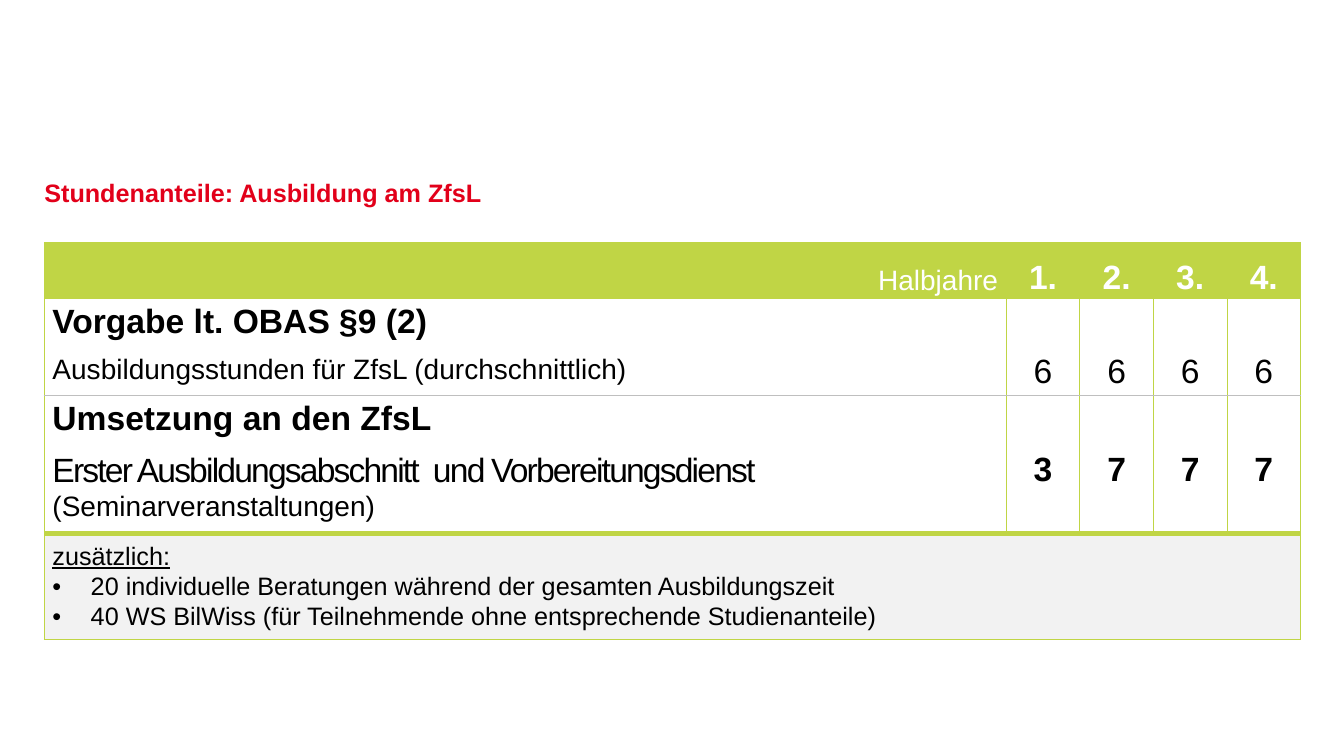
import pptx
import pptx.util
import pptx.dml.color
import pptx.enum.text
import pptx.oxml
import pptx.oxml.ns
from lxml import etree

Inches = pptx.util.Inches
Pt = pptx.util.Pt
RGB = pptx.dml.color.RGBColor
ALIGN = pptx.enum.text.PP_ALIGN
ANCHOR = pptx.enum.text.MSO_ANCHOR
qn = pptx.oxml.ns.qn

RED = RGB(0xE2, 0x00, 0x1A)
GREEN = RGB(0xC0, 0xD5, 0x45)
GREY = RGB(0xBF, 0xBF, 0xBF)
PALE = RGB(0xF2, 0xF2, 0xF2)
WHITE = RGB(0xFF, 0xFF, 0xFF)
BLACK = RGB(0x00, 0x00, 0x00)


def set_cell(cell, fill, top, base):
    """Set margins, borders and fill; top and base are (colour, points)."""
    cell.margin_left = cell.margin_right = Inches(0.08)
    cell.margin_top = cell.margin_bottom = Inches(0.02)
    props = cell._tc.get_or_add_tcPr()
    side = (GREEN, 0.75)
    for tag, (color, width) in zip(("lnL", "lnR", "lnT", "lnB"), (side, side, top, base)):
        line = etree.SubElement(props, qn("a:" + tag), w=str(Pt(width)))
        solid = etree.SubElement(line, qn("a:solidFill"))
        etree.SubElement(solid, qn("a:srgbClr"), val=str(color))
    cell.fill.solid()
    cell.fill.fore_color.rgb = fill


def set_para(para, text, size, bold=False, color=BLACK, align=ALIGN.LEFT, after=8):
    para.alignment = align
    para.line_spacing = 1.07
    para.space_after = Pt(after)
    para.font.name = "Arial"
    para.font.size = Pt(size)
    para.font.bold = bold
    para.font.color.rgb = color
    run = para.add_run()
    run.text = text
    return run


deck = pptx.Presentation()
deck.slide_width = Inches(13.33)
deck.slide_height = Inches(7.5)
slide = deck.slides.add_slide(deck.slide_layouts[6])

# Title
box = slide.shapes.add_textbox(Inches(0.44), Inches(1.55), Inches(12.44), Inches(0.71))
frame = box.text_frame
frame.word_wrap = True
frame.vertical_anchor = ANCHOR.MIDDLE
frame.margin_left = frame.margin_right = frame.margin_top = frame.margin_bottom = 0
title = frame.paragraphs[0]
title.text = "Stundenanteile: Ausbildung am ZfsL"
title.font.name = "Arial"
title.font.size = Pt(18)
title.font.bold = True
title.font.color.rgb = RED

# Table grid
table = slide.shapes.add_table(4, 5, Inches(0.44), Inches(2.41), Inches(12.46), Inches(3.72)).table
table.first_row = table.horz_banding = False
for col, width in zip(table.columns, [9.54] + [0.73] * 4):
    col.width = Inches(width)
for row, height in zip(table.rows, (0.55, 0.92, 1.27, 0.98)):
    row.height = Inches(height)
table.cell(3, 0).merge(table.cell(3, 4))

# Fills and borders, row by row
thin, rule, thick = (GREEN, 0.75), (GREY, 0.75), (GREEN, 4)
looks = [(GREEN, thin, thin), (WHITE, thin, rule), (WHITE, rule, thick), (PALE, thick, thin)]
for row, look in zip(table.rows, looks):
    for cell in row.cells:
        set_cell(cell, *look)

# Header and hours
head = table.cell(0, 0)
head.vertical_anchor = ANCHOR.BOTTOM
set_para(head.text_frame.paragraphs[0], "Halbjahre", 20, color=WHITE, align=ALIGN.RIGHT)
hours = [
    (("1.", "2.", "3.", "4."), True, WHITE),
    (("6", "6", "6", "6"), False, BLACK),
    (("3", "7", "7", "7"), True, BLACK),
]
for r, (values, bold, color) in enumerate(hours):
    for c, value in enumerate(values, 1):
        cell = table.cell(r, c)
        if r == 0:
            cell.vertical_anchor = ANCHOR.BOTTOM
        else:
            cell.margin_top = Inches(0.52)
        set_para(cell.text_frame.paragraphs[0], value, 24, bold, color, ALIGN.CENTER)

# Row labels
frame = table.cell(1, 0).text_frame
set_para(frame.paragraphs[0], "Vorgabe lt. OBAS §9 (2)", 24, True)
set_para(frame.add_paragraph(), "Ausbildungsstunden für ZfsL (durchschnittlich)", 20)

frame = table.cell(2, 0).text_frame
set_para(frame.paragraphs[0], "Umsetzung an den ZfsL", 24, True)
para = frame.add_paragraph()
phase = set_para(para, "Erster Ausbildungsabschnitt  und Vorbereitungsdienst ", 24)
phase.font._element.set("spc", "-130")
note = para.add_run()
note.text = "(Seminarveranstaltungen)"
note.font.size = Pt(20)

# Extra hours
extra = table.cell(3, 0)
extra.margin_top = Inches(0.07)
frame = extra.text_frame
para = frame.paragraphs[0]
set_para(para, "zusätzlich:", 18, after=0)
para.font.underline = True
for text in (
    "20 individuelle Beratungen während der gesamten Ausbildungszeit",
    "40 WS BilWiss (für Teilnehmende ohne entsprechende Studienanteile)",
):
    para = frame.add_paragraph()
    props = para._p.get_or_add_pPr()
    props.set("marL", str(Inches(0.38)))
    props.set("indent", str(-Inches(0.38)))
    etree.SubElement(props, qn("a:buFont"), typeface="Arial")
    etree.SubElement(props, qn("a:buChar"), char="•")
    set_para(para, text, 18, after=0)

deck.save("out.pptx")
